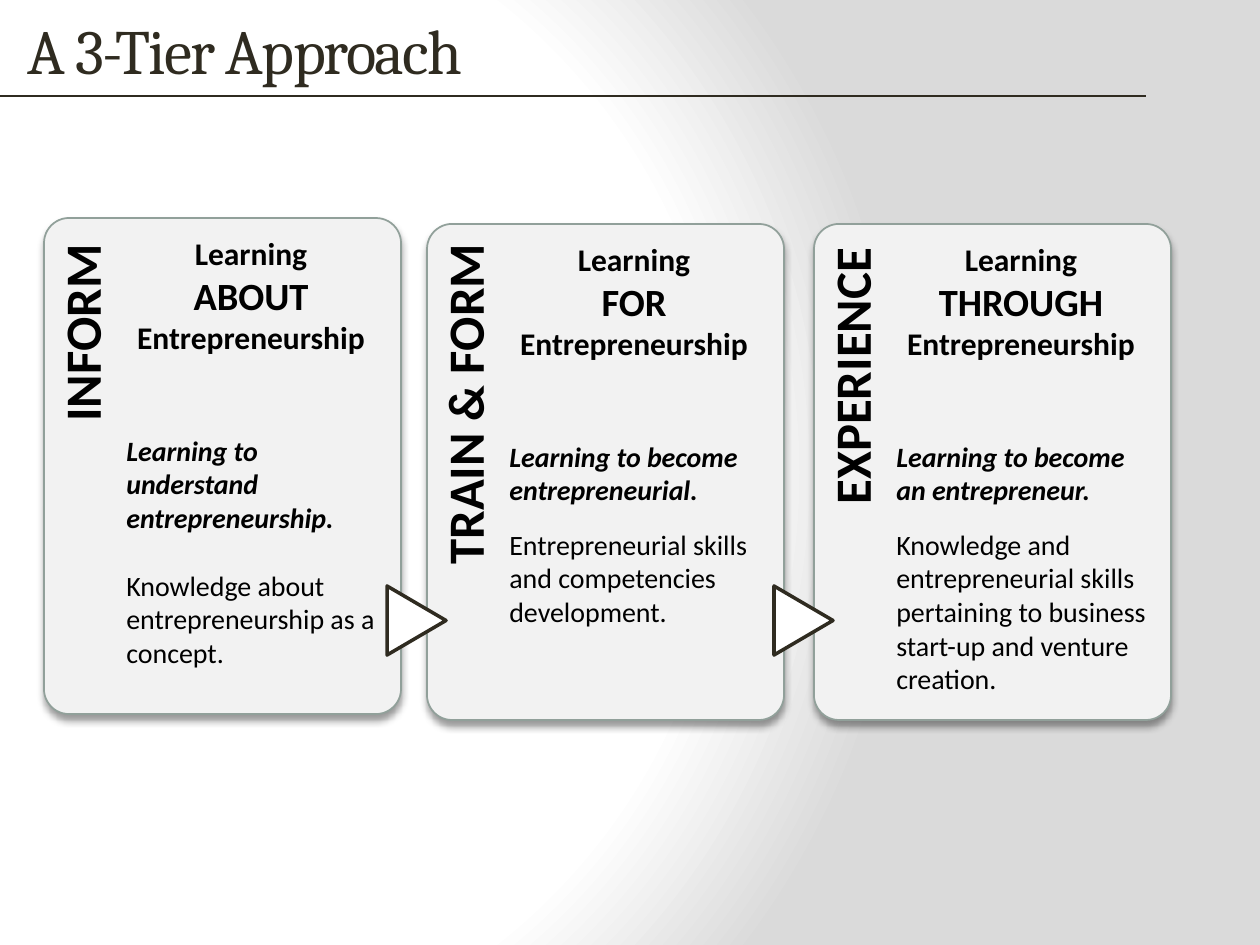
import pptx
import pptx.util
import pptx.dml.color
import pptx.enum.shapes
import pptx.enum.text
import pptx.oxml
import pptx.oxml.ns
from lxml import etree

PX = 914400 // 126
COLORS = {"ink": "2F2B20", "text": "000000", "card": "F2F2F2", "border": "91A09A",
          "white": "FFFFFF", "grey": "DADADA"}
TITLE = "A 3-Tier Approach"
# gap is the space in points between the aim and its detail
CARDS = [
    {"left": 44, "top": 218, "label": "INFORM", "label_top": 228, "label_length": 206,
     "keyword": "ABOUT", "gap": 19.5,
     "aim": "Learning to understand entrepreneurship.",
     "detail": "Knowledge about entrepreneurship as a concept."},
    {"left": 427, "top": 224, "label": "TRAIN & FORM", "label_top": 228, "label_length": 349,
     "keyword": "FOR", "gap": 12,
     "aim": "Learning to become entrepreneurial.",
     "detail": "Entrepreneurial skills and competencies development."},
    {"left": 814, "top": 224, "label": "EXPERIENCE", "label_top": 232, "label_length": 285,
     "keyword": "THROUGH", "gap": 12,
     "aim": "Learning to become an entrepreneur.",
     "detail": "Knowledge and entrepreneurial skills pertaining to business "
               "start-up and venture creation."},
]
CARD_WIDTH, CARD_HEIGHT = 357, 496
LABEL_THICKNESS, LABEL_CENTER = 112, 56
ARROW_WIDTH, ARROW_HEIGHT, ARROW_TOP, ARROW_OVERLAP = 69, 59, 591, 45
DRAWING_NS = "http://schemas.openxmlformats.org/drawingml/2006/main"
ALIGN = pptx.enum.text.PP_ALIGN
SHAPE = pptx.enum.shapes.MSO_SHAPE


def px(*lengths):
    return [round(length * PX) for length in lengths]


def rgb(name):
    return pptx.dml.color.RGBColor.from_string(COLORS[name])


def write(paragraph, text, size, font="Calibri", color="text", bold=False, italic=False,
          align=ALIGN.LEFT, before=0):
    paragraph.alignment = align
    paragraph.space_before = pptx.util.Pt(before)
    run = paragraph.add_run()
    run.text = text
    run.font.name = font
    run.font.size = pptx.util.Pt(size)
    run.font.bold = bold
    run.font.italic = italic
    run.font.color.rgb = rgb(color)
    return run


def add_text(shapes, box, lines, wrap=True, rotation=0):
    """Add a text box; each line is a dict of arguments for write."""
    text_box = shapes.add_textbox(*px(*box))
    text_box.rotation = rotation
    frame = text_box.text_frame
    frame.word_wrap = wrap
    for index, line in enumerate(lines):
        write(frame.add_paragraph() if index else frame.paragraphs[0], **line)


def add_preset(shapes, kind, box, fill, line, width):
    shape = shapes.add_shape(kind, *px(*box))
    shape.shadow.inherit = False
    shape.fill.solid()
    shape.fill.fore_color.rgb = rgb(fill)
    shape.line.color.rgb = rgb(line)
    shape.line.width = pptx.util.Pt(width)
    return shape


def set_background(slide):
    """Fill the background with a circular gradient centred to the left."""
    stops = "".join(
        f'<a:gs pos="{position * 1000}"><a:srgbClr val="{COLORS[name]}"/></a:gs>'
        for position, name in [(0, "white"), (75, "white"), (100, "grey")])
    background = pptx.oxml.parse_xml(
        f'<p:bg {pptx.oxml.ns.nsdecls("p", "a")}><p:bgPr><a:gradFill rotWithShape="1">'
        f'<a:gsLst>{stops}</a:gsLst><a:path path="circle">'
        '<a:fillToRect l="20000" t="50000" r="100000" b="50000"/></a:path>'
        '</a:gradFill><a:effectLst/></p:bgPr></p:bg>')
    slide.element.cSld.insert(0, background)


def add_shadow(shape):
    effects = shape.element.spPr.find(f"{{{DRAWING_NS}}}effectLst")
    effects.append(etree.fromstring(
        f'<a:outerShdw xmlns:a="{DRAWING_NS}" blurRad="50800" dist="38100" dir="5400000" '
        'rotWithShape="0"><a:srgbClr val="000000"><a:alpha val="40000"/></a:srgbClr>'
        '</a:outerShdw>'))


def add_title(slide):
    title = slide.shapes.title
    title.left, title.top, title.width, title.height = px(15, -4, 1099, 106)
    title.text_frame.vertical_anchor = pptx.enum.text.MSO_ANCHOR.MIDDLE
    run = write(title.text_frame.paragraphs[0], TITLE, 36, font="Cambria", color="ink")
    run.font._element.set("spc", "-100")
    rule = slide.shapes.add_connector(
        pptx.enum.shapes.MSO_CONNECTOR.STRAIGHT, *px(0, 96, 1146, 96))
    rule.line.color.rgb = rgb("ink")
    rule.line.width = pptx.util.Pt(1)
    etree.SubElement(rule.element.spPr, f"{{{DRAWING_NS}}}effectLst")


def add_card(slide, card):
    left, top = card["left"], card["top"]
    shapes = slide.shapes.add_group_shape().shapes
    panel = add_preset(shapes, SHAPE.ROUNDED_RECTANGLE,
                       (left, top, CARD_WIDTH, CARD_HEIGHT), "card", "border", 1)
    panel.adjustments[0] = 0.07
    add_shadow(panel)

    heading = [("Learning", 18), (card["keyword"], 22), ("Entrepreneurship", 18)]
    add_text(shapes, (left + 76, top + 10, 262, 174),
             [dict(text=text, size=size, bold=True, align=ALIGN.CENTER)
              for text, size in heading], wrap=False)

    length = card["label_length"]
    label_box = (left + LABEL_CENTER - length / 2,
                 card["label_top"] + (length - LABEL_THICKNESS) / 2,
                 length, LABEL_THICKNESS)
    add_text(shapes, label_box, [dict(text=card["label"], size=29, bold=True)],
             wrap=False, rotation=270)

    add_text(shapes, (left + 70, top + 209, 277, 260),
             [dict(text=card["aim"], size=16, bold=True, italic=True),
              dict(text=card["detail"], size=16, before=card["gap"])])


def main():
    presentation = pptx.Presentation()
    presentation.slide_width, presentation.slide_height = px(1260, 945)
    slide = presentation.slides.add_slide(presentation.slide_layouts[5])
    set_background(slide)
    add_title(slide)
    for index, card in enumerate(CARDS):
        add_card(slide, card)
        if index:
            arrow = add_preset(
                slide.shapes, SHAPE.ISOSCELES_TRIANGLE,
                (card["left"] - ARROW_OVERLAP, ARROW_TOP, ARROW_WIDTH, ARROW_HEIGHT),
                "white", "ink", 2)
            arrow.rotation = 90
    presentation.save("out.pptx")


if __name__ == "__main__":
    main()
